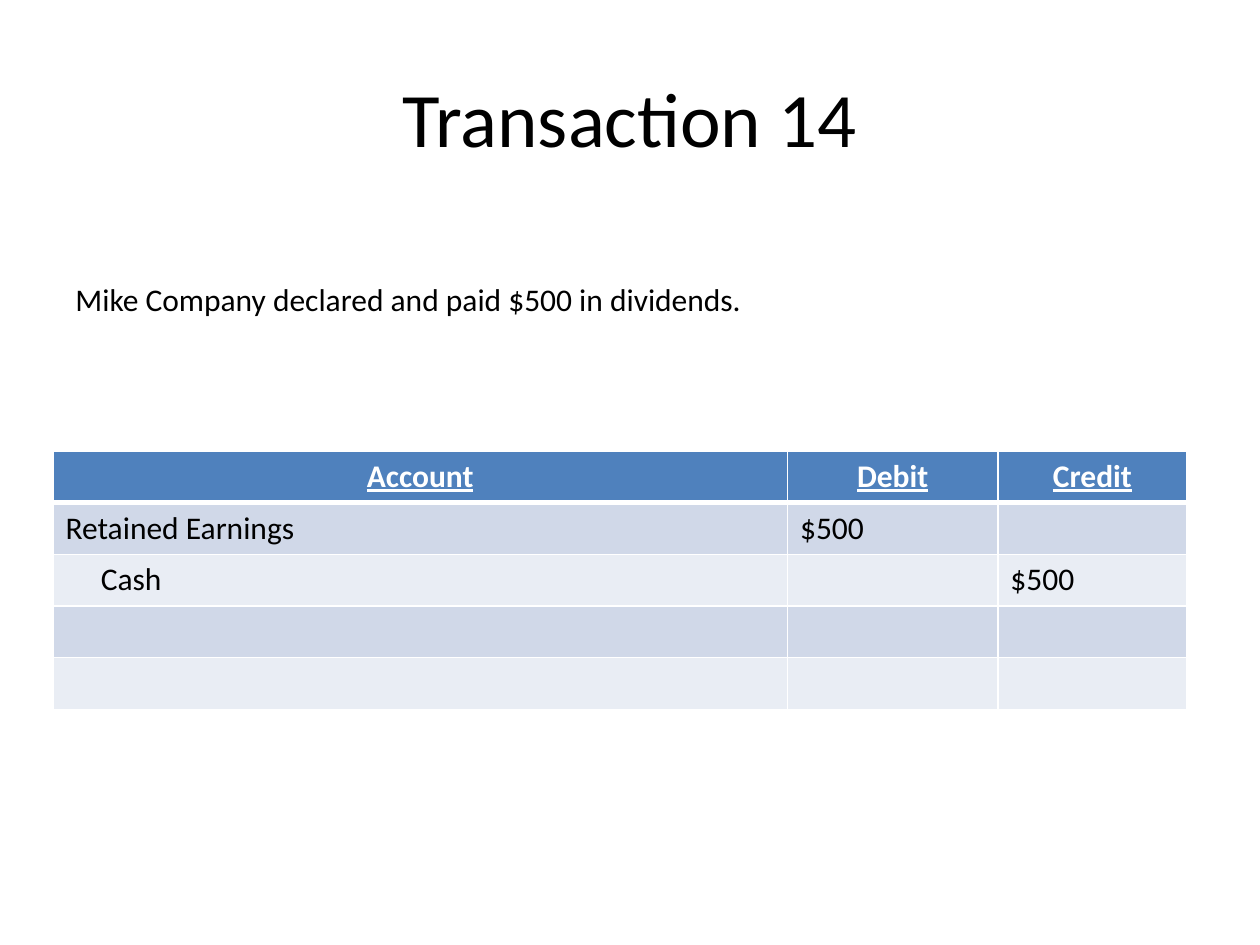
from lxml import etree
from pptx import Presentation
from pptx.dml.color import RGBColor
from pptx.enum.text import MSO_ANCHOR, PP_ALIGN
from pptx.oxml.ns import qn
from pptx.util import Inches, Pt

CENTER, LEFT = PP_ALIGN.CENTER, PP_ALIGN.LEFT
MIDDLE = MSO_ANCHOR.MIDDLE
TITLE_ONLY = 5
FONT = "Calibri"
COLORS = {"text": "000000", "white": "FFFFFF", "header": "4F81BD",
          "odd": "D0D8E8", "even": "E9EDF4"}

# Journal entry grid
COLUMN_WIDTHS = (5.83, 1.67, 1.5)
ROW_HEIGHT = 0.41
ENTRY_INDENT = 0.28
CELL_MARGIN = 0.1
ENTRIES = [
    ("Account", "Debit", "Credit"),
    ("Retained Earnings", "$500", ""),
    ("Cash", "", "$500"),
    ("", "", ""),
    ("", "", ""),
]
CREDITED_ACCOUNTS = {"Cash"}


def color(name):
    return RGBColor.from_string(COLORS[name])


def add_text(frame, text, size, tone="text", align=LEFT, heading=False):
    para = frame.paragraphs[0]
    para.alignment = align
    span = para.add_run()
    span.text = text
    font = span.font
    font.name, font.size = FONT, Pt(size)
    font.bold = font.underline = heading
    font.color.rgb = color(tone)


def set_borders(cell, bottom_width):
    """Draw white cell borders, placed ahead of the fill as the schema asks."""
    properties = cell._tc.get_or_add_tcPr()
    widths = {"a:lnL": 1, "a:lnR": 1, "a:lnT": 1, "a:lnB": bottom_width}
    for position, (side, width) in enumerate(widths.items()):
        line = etree.Element(qn(side), w=str(Pt(width)))
        fill = etree.SubElement(line, qn("a:solidFill"))
        etree.SubElement(fill, qn("a:srgbClr"), val=COLORS["white"])
        properties.insert(position, line)


def add_title(page, text):
    title = page.shapes.title
    title.left, title.top = Inches(0.5), Inches(0.3)
    title.width, title.height = Inches(9), Inches(1.25)
    title.text_frame.vertical_anchor = MIDDLE
    add_text(title.text_frame, text, 44, align=CENTER)


def add_description(page, text):
    box = page.shapes.add_textbox(Inches(0.5), Inches(2.17),
                                  Inches(8.92), Inches(0.4))
    box.text_frame.word_wrap = True
    add_text(box.text_frame, text, 18)


def fill_cell(cell, text, row):
    is_header = row == 0
    tone = "header" if is_header else "odd" if row % 2 else "even"
    cell.fill.solid()
    cell.fill.fore_color.rgb = color(tone)
    set_borders(cell, 3 if is_header else 1)
    if text in CREDITED_ACCOUNTS:
        cell.margin_left = Inches(CELL_MARGIN + ENTRY_INDENT)
    if text:
        add_text(cell.text_frame, text, 18,
                 tone="white" if is_header else "text",
                 align=CENTER if is_header else LEFT, heading=is_header)


def add_journal(page, entries):
    frame = page.shapes.add_table(
        len(entries), len(COLUMN_WIDTHS), Inches(0.42), Inches(3.58),
        Inches(sum(COLUMN_WIDTHS)), Inches(ROW_HEIGHT * len(entries)))
    table = frame.table
    for column, width in zip(table.columns, COLUMN_WIDTHS):
        column.width = Inches(width)
    for row, entry in enumerate(entries):
        table.rows[row].height = Inches(ROW_HEIGHT)
        for column, text in enumerate(entry):
            fill_cell(table.cell(row, column), text, row)


def main():
    deck = Presentation()
    deck.slide_width, deck.slide_height = Inches(10), Inches(7.5)
    page = deck.slides.add_slide(deck.slide_layouts[TITLE_ONLY])
    add_title(page, "Transaction 14")
    add_journal(page, ENTRIES)
    add_description(page, "Mike Company declared and paid $500 in dividends.")
    deck.save("out.pptx")


if __name__ == "__main__":
    main()
